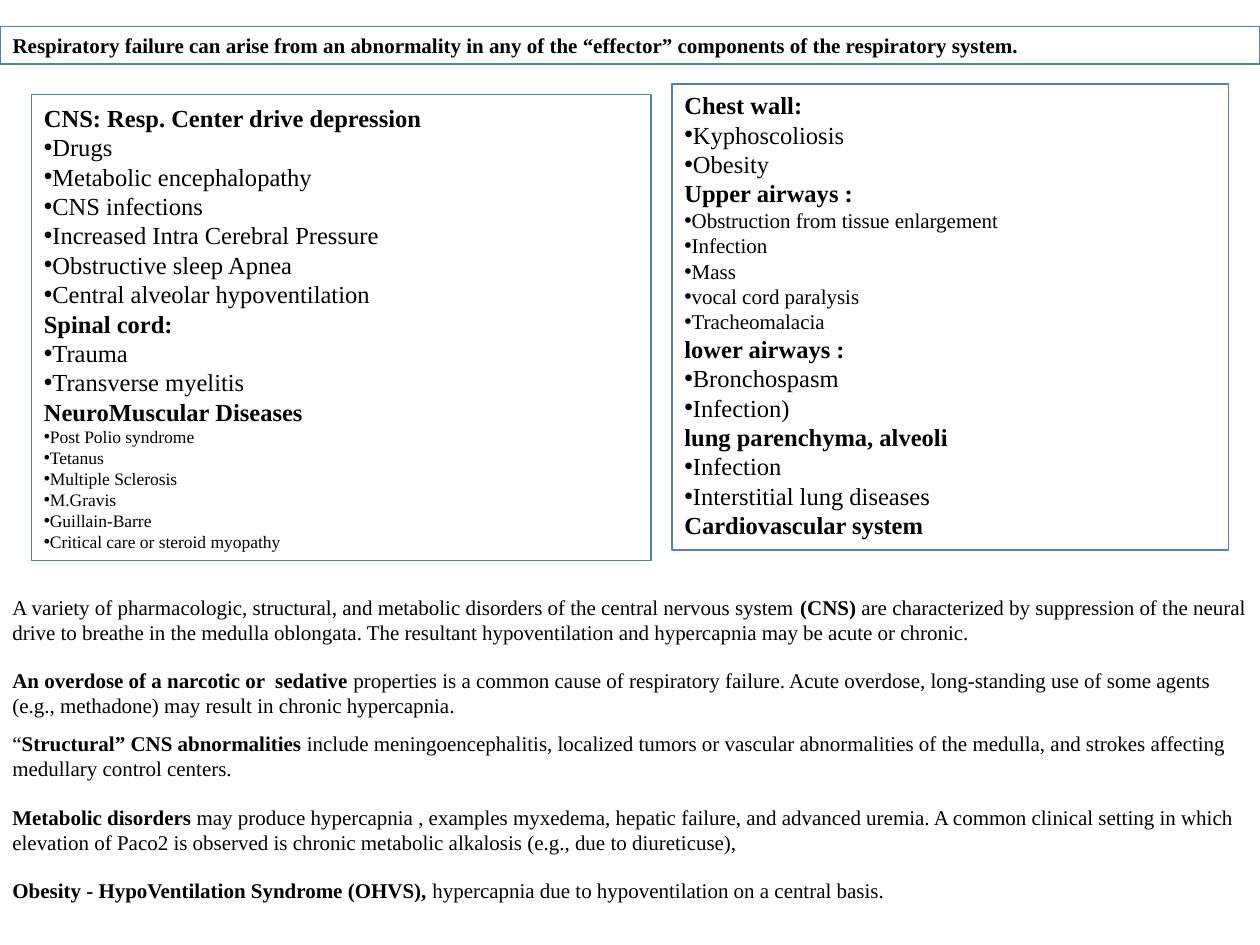
import pptx
import pptx.util
import pptx.dml.color
import pptx.enum.shapes
import pptx.enum.text
import pptx.oxml
import pptx.oxml.ns
from lxml import etree

Pt = pptx.util.Pt
ANCHOR = pptx.enum.text.MSO_ANCHOR
AUTO_SIZE = pptx.enum.text.MSO_AUTO_SIZE
COLORS = {"text": "000000", "border": "4F81BD"}
FONT = "Times New Roman"

HEADLINE = ("Respiratory failure can arise from an abnormality in any of the "
            "“effector” components of the respiratory system.")

NERVOUS_CAUSES = [
    ("CNS: Resp. Center drive depression", 14,
     ["Drugs", "Metabolic encephalopathy", "CNS infections",
      "Increased Intra Cerebral Pressure", "Obstructive sleep Apnea",
      "Central alveolar hypoventilation"]),
    ("Spinal cord:", 14, ["Trauma", "Transverse myelitis"]),
    ("NeuroMuscular Diseases", 10,
     ["Post Polio syndrome", "Tetanus", "Multiple Sclerosis", "M.Gravis",
      "Guillain-Barre", "Critical care or steroid myopathy"]),
]

THORACIC_CAUSES = [
    ("Chest wall:", 14, ["Kyphoscoliosis", "Obesity"]),
    ("Upper airways :", 12,
     ["Obstruction from tissue enlargement", "Infection", "Mass",
      "vocal cord paralysis", "Tracheomalacia"]),
    ("lower airways :", 14, ["Bronchospasm", "Infection)"]),
    ("lung parenchyma, alveoli", 14, ["Infection", "Interstitial lung diseases"]),
    ("Cardiovascular system", 14, []),
]

NOTES = [
    (336, 36, [
        ("A variety of pharmacologic, structural, and metabolic disorders of the "
         "central nervous system ", False),
        ("(CNS) ", True),
        ("are characterized by suppression of the neural drive to breathe in the "
         "medulla oblongata. The resultant hypoventilation and hypercapnia may be "
         "acute or chronic.", False)]),
    (378, 36, [
        ("An overdose of a narcotic or  sedative ", True),
        ("properties is a common cause of respiratory failure. Acute overdose, "
         "long-standing use of some agents (e.g., methadone) may result in chronic "
         "hypercapnia.", False)]),
    (414, 36, [
        ("“", False),
        ("Structural” CNS abnormalities ", True),
        ("include meningoencephalitis, localized tumors or vascular abnormalities "
         "of the medulla, and strokes affecting medullary control centers.", False)]),
    (456, 36, [
        ("Metabolic disorders ", True),
        ("may produce hypercapnia , examples myxedema, hepatic failure, and advanced "
         "uremia. A common clinical setting in which elevation of Paco2 is observed "
         "is chronic metabolic alkalosis (e.g., due to diureticuse),", False)]),
    (498, 21.6, [
        ("Obesity - HypoVentilation Syndrome (OHVS), ", True),
        ("hypercapnia due to hypoventilation on a central basis.", False)]),
]


def apply(obj, values):
    for name, value in values.items():
        setattr(obj, name, value)


def rgb(name):
    return pptx.dml.color.RGBColor.from_string(COLORS[name])


def add_run(p, text, size, bold):
    r = p.add_run()
    r.text = text
    apply(r.font, {"name": FONT, "size": Pt(size), "bold": bold})
    r.font.color.rgb = rgb("text")


def add_bullet(p):
    pPr = p._p.get_or_add_pPr()
    for tag, key, value in (("a:buFont", "typeface", "Arial"),
                            ("a:buChar", "char", "•")):
        etree.SubElement(pPr, pptx.oxml.ns.qn(tag)).set(key, value)


def format_frame(tf, anchor, auto_size=AUTO_SIZE.SHAPE_TO_FIT_TEXT):
    apply(tf, {"word_wrap": True, "auto_size": auto_size,
               "vertical_anchor": anchor})


def draw_border(sp, width):
    sp.fill.background()
    sp.line.color.rgb = rgb("border")
    sp.line.width = Pt(width)


def set_headline(s):
    sp = s.shapes.title
    apply(sp, {"left": Pt(0), "top": Pt(15), "width": Pt(720), "height": Pt(21.6)})
    draw_border(sp, 0.75)
    format_frame(sp.text_frame, ANCHOR.TOP, AUTO_SIZE.NONE)
    p = sp.text_frame.paragraphs[0]
    p.alignment = pptx.enum.text.PP_ALIGN.LEFT
    add_run(p, HEADLINE, 12, True)


def add_cause_box(s, left, top, width, anchor, groups):
    sp = s.shapes.add_shape(pptx.enum.shapes.MSO_SHAPE.RECTANGLE,
                            Pt(left), Pt(top), Pt(width), Pt(266.4))
    sp.shadow.inherit = False
    draw_border(sp, 1)
    tf = sp.text_frame
    format_frame(tf, anchor)
    lines = []
    for heading, size, items in groups:
        lines.append((heading, 14, True))
        lines += [(item, size, False) for item in items]
    for i, (text, size, is_heading) in enumerate(lines):
        p = tf.add_paragraph() if i else tf.paragraphs[0]
        p.alignment = pptx.enum.text.PP_ALIGN.LEFT
        if not is_heading:
            add_bullet(p)
        add_run(p, text, size, is_heading)


def add_note(s, top, height, runs):
    tf = s.shapes.add_textbox(Pt(0), Pt(top), Pt(720), Pt(height)).text_frame
    format_frame(tf, ANCHOR.TOP)
    for text, bold in runs:
        add_run(tf.paragraphs[0], text, 12, bold)


def main():
    prs = pptx.Presentation()
    apply(prs, {"slide_width": Pt(720), "slide_height": Pt(540)})
    s = prs.slides.add_slide(prs.slide_layouts[5])
    set_headline(s)
    add_cause_box(s, 18, 54, 354, ANCHOR.MIDDLE, NERVOUS_CAUSES)
    add_cause_box(s, 384, 48, 318, ANCHOR.TOP, THORACIC_CAUSES)
    for top, height, runs in NOTES:
        add_note(s, top, height, runs)
    prs.save("out.pptx")


if __name__ == "__main__":
    main()
